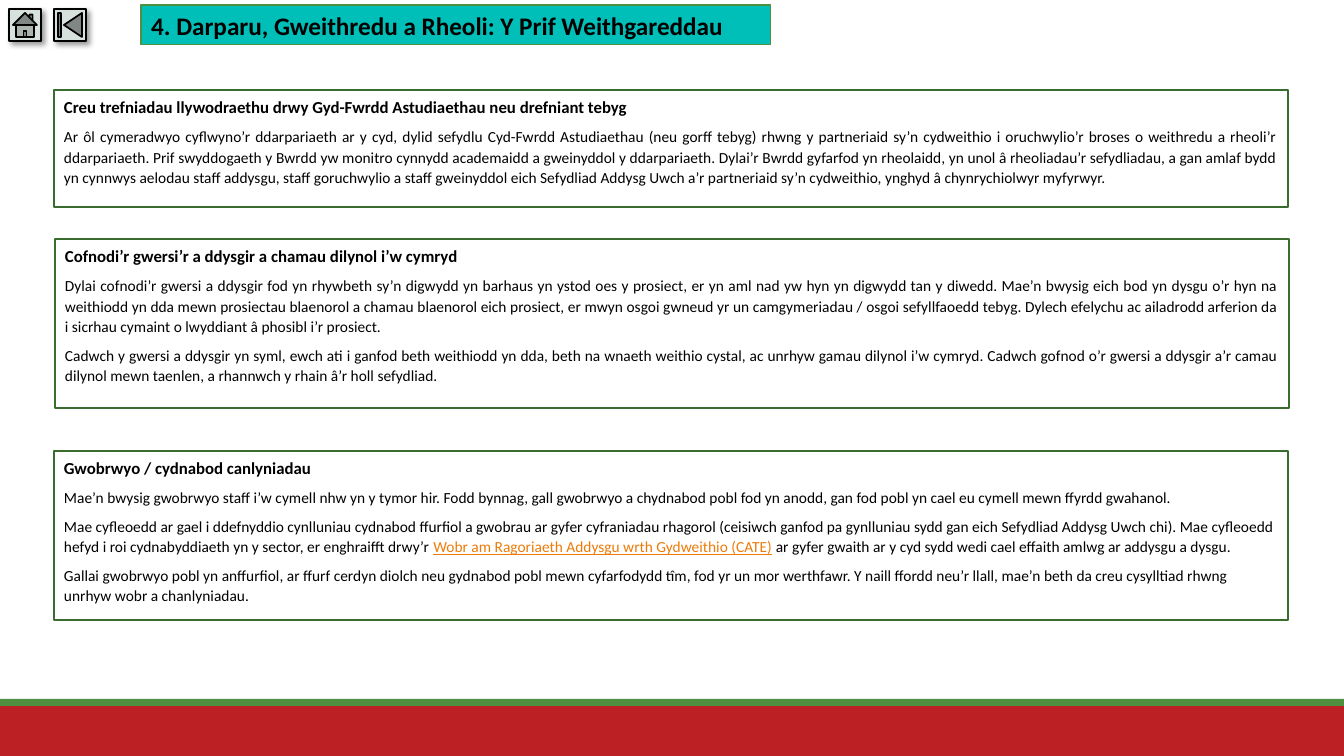
import lxml.etree
import pptx
import pptx.dml.color
import pptx.enum.shapes
import pptx.enum.text
import pptx.oxml.ns
import pptx.util

RGB = pptx.dml.color.RGBColor
SHAPE = pptx.enum.shapes.MSO_SHAPE
ALIGN = pptx.enum.text.PP_ALIGN
ANCHOR = pptx.enum.text.MSO_ANCHOR

BLACK = RGB(0x00, 0x00, 0x00)
RED = RGB(0xBC, 0x20, 0x24)
GREEN = RGB(0x4E, 0x90, 0x40)
DARK = RGB(0x3A, 0x6B, 0x2F)
TEAL = RGB(0x00, 0xBE, 0xB8)
PALE = RGB(0xD7, 0xE2, 0xDC)
ORANGE = RGB(0xEE, 0x7B, 0x08)
FONT = "Calibri"
SCALE = 914400 / 100.8
LINK = "Wobr am Ragoriaeth Addysgu wrth Gydweithio (CATE)"

PANELS = [
    ((54, 90, 1234, 117), ALIGN.JUSTIFY,
     "Creu trefniadau llywodraethu drwy Gyd-Fwrdd Astudiaethau neu drefniant tebyg",
     ["Ar ôl cymeradwyo cyflwyno’r ddarpariaeth ar y cyd, dylid sefydlu Cyd-Fwrdd Astudiaethau "
      "(neu gorff tebyg) rhwng y partneriaid sy’n cydweithio i oruchwylio’r broses o weithredu a "
      "rheoli’r ddarpariaeth. Prif swyddogaeth y Bwrdd yw monitro cynnydd academaidd a gweinyddol "
      "y ddarpariaeth. Dylai’r Bwrdd gyfarfod yn rheolaidd, yn unol â rheoliadau’r sefydliadau, a "
      "gan amlaf bydd yn cynnwys aelodau staff addysgu, staff goruchwylio a staff gweinyddol eich "
      "Sefydliad Addysg Uwch a’r partneriaid sy’n cydweithio, ynghyd â chynrychiolwyr myfyrwyr."]),
    ((55, 239, 1234, 169), ALIGN.JUSTIFY,
     "Cofnodi’r gwersi’r a ddysgir a chamau dilynol i’w cymryd",
     ["Dylai cofnodi’r gwersi a ddysgir fod yn rhywbeth sy’n digwydd yn barhaus yn ystod oes y "
      "prosiect, er yn aml nad yw hyn yn digwydd tan y diwedd. Mae’n bwysig eich bod yn dysgu o’r "
      "hyn na weithiodd yn dda mewn prosiectau blaenorol a chamau blaenorol eich prosiect, er mwyn "
      "osgoi gwneud yr un camgymeriadau / osgoi sefyllfaoedd tebyg. Dylech efelychu ac ailadrodd "
      "arferion da i sicrhau cymaint o lwyddiant â phosibl i’r prosiect.",
      "Cadwch y gwersi a ddysgir yn syml, ewch ati i ganfod beth weithiodd yn dda, beth na wnaeth "
      "weithio cystal, ac unrhyw gamau dilynol i’w cymryd. Cadwch gofnod o’r gwersi a ddysgir a’r "
      "camau dilynol mewn taenlen, a rhannwch y rhain â’r holl sefydliad."]),
    ((54, 451, 1234, 169), ALIGN.LEFT,
     "Gwobrwyo / cydnabod canlyniadau",
     ["Mae’n bwysig gwobrwyo staff i’w cymell nhw yn y tymor hir. Fodd bynnag, gall gwobrwyo a "
      "chydnabod pobl fod yn anodd, gan fod pobl yn cael eu cymell mewn ffyrdd gwahanol.",
      "Mae cyfleoedd ar gael i ddefnyddio cynlluniau cydnabod ffurfiol a gwobrau ar gyfer "
      "cyfraniadau rhagorol (ceisiwch ganfod pa gynlluniau sydd gan eich Sefydliad Addysg Uwch "
      "chi). Mae cyfleoedd hefyd i roi cydnabyddiaeth yn y sector, er enghraifft drwy’r "
      + LINK + " ar gyfer gwaith ar y cyd sydd wedi cael effaith amlwg ar addysgu a dysgu.",
      "Gallai gwobrwyo pobl yn anffurfiol, ar ffurf cerdyn diolch neu gydnabod pobl mewn "
      "cyfarfodydd tîm, fod yr un mor werthfawr. Y naill ffordd neu’r llall, mae’n beth da creu "
      "cysylltiad rhwng unrhyw wobr a chanlyniadau."]),
]


def px(count):
    """Turn pixels into EMU."""
    return pptx.util.Emu(round(count * SCALE))


def paint(shape, fill=None, line=None, width=1.25):
    """Set the fill and line of a shape, or clear them."""
    if fill is None:
        shape.fill.background()
    else:
        shape.fill.solid()
        shape.fill.fore_color.rgb = fill
    if line is None:
        shape.line.fill.background()
    else:
        shape.line.color.rgb = line
        shape.line.width = pptx.util.Pt(width)


def block(slide, kind, box, fill=None, line=None):
    """Add a flat preset shape in the box."""
    shape = slide.shapes.add_shape(kind, *map(px, box))
    shape.shadow.inherit = False
    paint(shape, fill, line)
    return shape


def style(para, size, bold, align):
    """Set the font and alignment of a paragraph."""
    para.alignment = align
    font = para.font
    font.name, font.size, font.bold = FONT, pptx.util.Pt(size), bold
    font.color.rgb = BLACK


def write(para, text):
    """Fill a paragraph, marking the link words."""
    before, link, after = text.partition(LINK)
    for part in filter(None, (before, link, after)):
        run = para.add_run()
        run.text = part
        if part == LINK:
            run.font.color.rgb = ORANGE
            run.font.underline = True


def panel(slide, box, align, head, body):
    """Add an outlined panel with a heading and paragraphs."""
    frame = block(slide, SHAPE.RECTANGLE, box, line=DARK).text_frame
    frame.word_wrap = True
    frame.vertical_anchor = ANCHOR.TOP
    for index, text in enumerate([head, *body]):
        para = frame.add_paragraph() if index else frame.paragraphs[0]
        style(para, 11 if index else 12, not index, align if index else ALIGN.LEFT)
        para.line_spacing = 1.1
        para.space_before = pptx.util.Pt(0 if index else 6)
        para.space_after = pptx.util.Pt(6)
        write(para, text)


def button(slide, kind, box):
    """Add an action button with a soft shadow."""
    shape = block(slide, kind, box, PALE, BLACK)
    tag = pptx.oxml.ns.qn
    effects = shape.element.spPr.find(tag("a:effectLst"))
    shade = lxml.etree.SubElement(
        effects, tag("a:outerShdw"), blurRad="50800", dist="38100", dir="2700000",
        algn="tl", rotWithShape="0")
    tint = lxml.etree.SubElement(shade, tag("a:srgbClr"), val="000000")
    lxml.etree.SubElement(tint, tag("a:alpha"), val="40000")


def header(slide, box):
    """Place and format the title."""
    title = slide.shapes.title
    title.left, title.top, title.width, title.height = map(px, box)
    paint(title, TEAL, GREEN, 0.75)
    frame = title.text_frame
    frame.text = "4. Darparu, Gweithredu a Rheoli: Y Prif Weithgareddau"
    frame.word_wrap = True
    frame.auto_size = pptx.enum.text.MSO_AUTO_SIZE.NONE
    frame.vertical_anchor = ANCHOR.MIDDLE
    style(frame.paragraphs[0], 18, True, ALIGN.LEFT)


def footer(slide, box):
    """Add the red band with its green strip on top."""
    left, top, width, height = box
    strip = 7
    block(slide, SHAPE.RECTANGLE, (left, top + strip, width, height - strip), RED)
    block(slide, SHAPE.RECTANGLE, (left, top, width, strip), GREEN)


def main():
    """Build and save the slide."""
    deck = pptx.Presentation()
    deck.slide_width, deck.slide_height = px(1344), px(756)
    slide = deck.slides.add_slide(deck.slide_layouts[5])
    footer(slide, (0, 699, 1344, 57))
    header(slide, (141, 5, 630, 40))
    button(slide, SHAPE.ACTION_BUTTON_HOME, (9, 9, 32, 32))
    button(slide, SHAPE.ACTION_BUTTON_BEGINNING, (54, 9, 32, 32))
    for part in PANELS:
        panel(slide, *part)
    deck.save("out.pptx")


if __name__ == "__main__":
    main()
